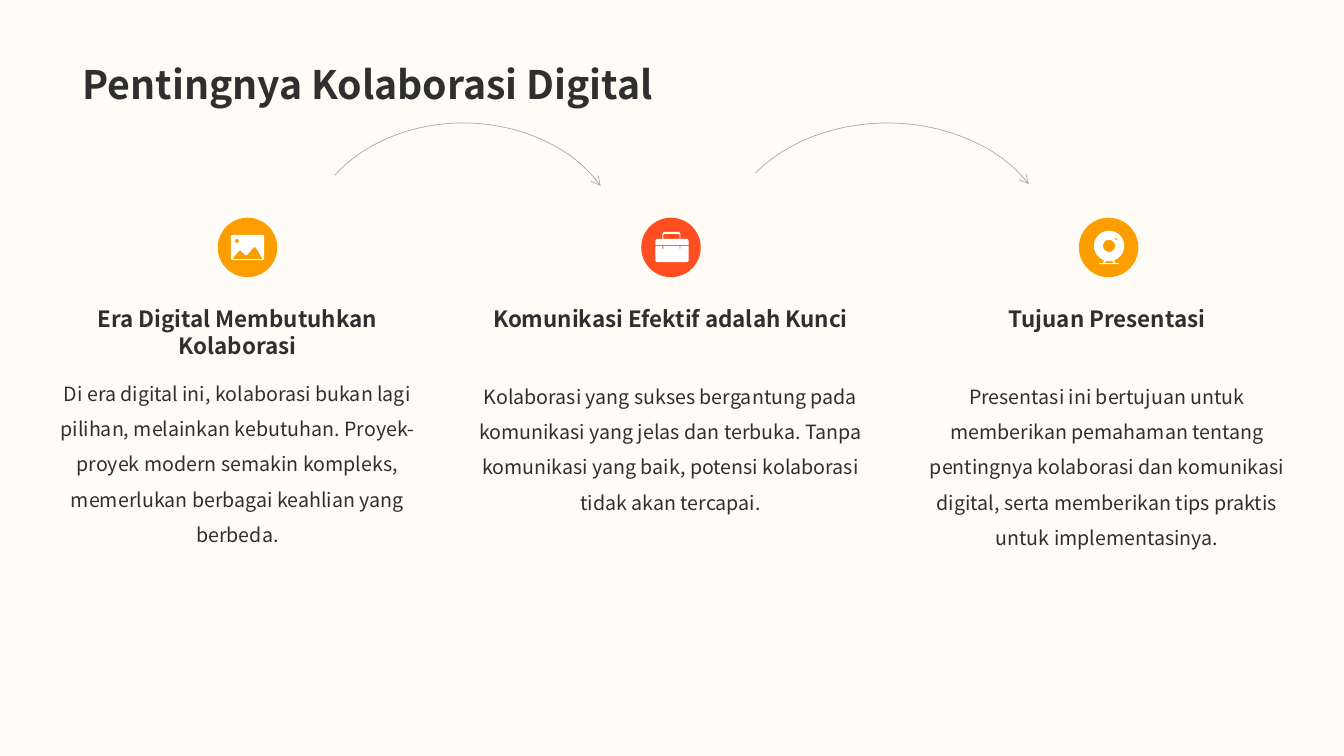
from dataclasses import dataclass
from math import cos, radians, sin

from lxml.etree import SubElement
from pptx import Presentation
from pptx.dml.color import RGBColor
from pptx.enum.shapes import MSO_SHAPE
from pptx.enum.text import MSO_ANCHOR, MSO_AUTO_SIZE, PP_ALIGN
from pptx.oxml.ns import qn
from pptx.util import Inches, Pt

FONT = "Noto Sans CJK SC"
INK, WHITE, CREAM = "2F2F2F", "FFFFFF", "FFFCF5"
ORANGE, RED = "FD9E00", "FF4E22"
BADGE_TOP, BADGE_SIZE = 2.16, 0.59

Contour = list[tuple[float, float]]


@dataclass
class Column:
    left: float
    width: float
    body_top: float
    heading: str
    body: str
    badge_left: float
    badge_color: str
    glyph: list[Contour]


@dataclass
class CurvedArrow:
    left: float
    width: float


def color(value: str) -> RGBColor:
    return RGBColor.from_string(value)


def arc(x: float, y: float, radius: float, start: int = 0, end: int = 360) -> Contour:
    steps = 48
    angles = [radians(start + (end - start) * step / steps) for step in range(steps + 1)]
    return [(x + radius * cos(angle), y + radius * sin(angle)) for angle in angles]


# Glyph outlines, in hundredths of an inch from the badge corner
PICTURE_GLYPH = [
    [(15, 17), (44, 17), (45.5, 17.5), (46, 19), (46, 40), (45.5, 41.5),
     (44, 42), (15, 42), (13.5, 41.5), (13, 40), (13, 19), (13.5, 17.5)],
    [(15, 40), (21, 33), (22, 32.5), (23, 33), (27, 37), (28.5, 37.3), (30, 36),
     (35, 30), (36.5, 29), (38, 30), (44, 40), (44, 41), (16, 41)],
    arc(19, 23, 2),
]
BRIEFCASE_GLYPH = [
    [(14, 28), (21, 28), (21, 31), (22, 31), (22, 28), (38, 28), (38, 31), (39, 31),
     (39, 28), (47, 28), (47, 43), (45.5, 44), (15.5, 44), (14, 43)],
    [(37, 14), (38.5, 15), (39, 17), (39, 21), (45, 21), (46.5, 21.5), (47, 23), (47, 27),
     (14, 27), (14, 23), (14.5, 21.5), (16, 21), (21, 21), (21, 17), (21.5, 15), (23, 14)],
    [(37, 16), (23, 16), (22, 17), (22, 21), (38, 21), (38, 17)],
]
WEBCAM_GLYPH = [
    arc(30, 28, 15, 110, 430)
    + [(36, 45), (40, 45), (40, 46), (20, 46), (20, 45), (24, 45)],
    [(27, 43), (25, 45), (35, 45), (33, 43)],
    arc(30, 28, 6),
    arc(37, 21, 1),
]

COLUMNS = [
    Column(0.27, 4.17, 3.62, "Era Digital Membutuhkan Kolaborasi",
           "Di era digital ini, kolaborasi bukan lagi pilihan, melainkan kebutuhan. "
           "Proyek-proyek modern semakin kompleks, memerlukan berbagai keahlian yang berbeda.",
           2.16, ORANGE, PICTURE_GLYPH),
    Column(4.59, 4.12, 3.65, "Komunikasi Efektif adalah Kunci",
           "Kolaborasi yang sukses bergantung pada komunikasi yang jelas dan terbuka. "
           "Tanpa komunikasi yang baik, potensi kolaborasi tidak akan tercapai.",
           6.36, RED, BRIEFCASE_GLYPH),
    Column(8.92, 4.12, 3.65, "Tujuan Presentasi",
           "Presentasi ini bertujuan untuk memberikan pemahaman tentang pentingnya kolaborasi "
           "dan komunikasi digital, serta memberikan tips praktis untuk implementasinya.",
           10.7, ORANGE, WEBCAM_GLYPH),
]
ARROWS = [CurvedArrow(3.02, 3.15), CurvedArrow(7.16, 3.28)]


def style_text(frame, text: str, size: int, bold: bool, align: PP_ALIGN, spacing: float) -> None:
    frame.word_wrap = True
    para = frame.paragraphs[0]
    para.text = text
    para.alignment = align
    para.line_spacing = spacing
    para.font.name = FONT
    para.font.size = Pt(size)
    para.font.bold = bold
    para.font.color.rgb = color(INK)


def fill_plain(shape, fill: str) -> None:
    shape.shadow.inherit = False
    shape.fill.solid()
    shape.fill.fore_color.rgb = color(fill)
    shape.line.fill.background()


def add_title(page, text: str) -> None:
    title = page.shapes.title
    title.left, title.top = Inches(0.72), Inches(0)
    title.width, title.height = Inches(11.88), Inches(1.12)
    title.text_frame.vertical_anchor = MSO_ANCHOR.BOTTOM
    style_text(title.text_frame, text, 28, True, PP_ALIGN.LEFT, 0.9)


def add_badge(page, column: Column) -> None:
    group = page.shapes.add_group_shape()
    disc = group.shapes.add_shape(
        MSO_SHAPE.ROUNDED_RECTANGLE, Inches(column.badge_left), Inches(BADGE_TOP),
        Inches(BADGE_SIZE), Inches(BADGE_SIZE))
    disc.adjustments[0] = 0.5
    fill_plain(disc, column.badge_color)

    outlines = [[(Inches(column.badge_left + x / 100), Inches(BADGE_TOP + y / 100))
                 for x, y in contour] for contour in column.glyph]
    builder = group.shapes.build_freeform(*outlines[0][0])
    for outline in outlines:
        builder.move_to(*outline[0])
        builder.add_line_segments(outline[1:], close=True)
    fill_plain(builder.convert_to_shape(), WHITE)


def add_text(page, column: Column, top: float, height: float,
             text: str, size: int, bold: bool, spacing: float) -> None:
    box = page.shapes.add_textbox(
        Inches(column.left), Inches(top), Inches(column.width), Inches(height))
    style_text(box.text_frame, text, size, bold, PP_ALIGN.CENTER, spacing)
    box.text_frame.auto_size = MSO_AUTO_SIZE.SHAPE_TO_FIT_TEXT


def add_curved_arrow(page, arrow: CurvedArrow) -> None:
    curve = page.shapes.add_shape(
        MSO_SHAPE.ARC, Inches(arrow.left), Inches(1.22), Inches(arrow.width), Inches(2.51))
    # Angles from 210 to 335 degrees, in the units of the arc shape
    curve.adjustments[0], curve.adjustments[1] = 126.03, 201.09
    curve.shadow.inherit = False
    curve.fill.background()
    curve.line.width = Pt(0.5)
    curve.line.color.rgb = color(INK)
    line = curve.line._get_or_add_ln()
    SubElement(line.find(f".//{qn('a:srgbClr')}"), qn("a:alpha"), val="40000")
    SubElement(line, qn("a:tailEnd"), type="arrow")


def main() -> None:
    deck = Presentation()
    deck.slide_width, deck.slide_height = Inches(13.33), Inches(7.5)
    page = deck.slides.add_slide(deck.slide_layouts[5])
    page.background.fill.solid()
    page.background.fill.fore_color.rgb = color(CREAM)

    add_title(page, "Pentingnya Kolaborasi Digital")

    # Three columns: badge, heading and body
    for column in COLUMNS:
        add_badge(page, column)
        add_text(page, column, 2.98, 0.37, column.heading, 16, True, 1.0)
        add_text(page, column, column.body_top, 1.29, column.body, 14, False, 1.5)

    # Arrows leading from one column to the next
    for arrow in ARROWS:
        add_curved_arrow(page, arrow)

    deck.save("out.pptx")


if __name__ == "__main__":
    main()
